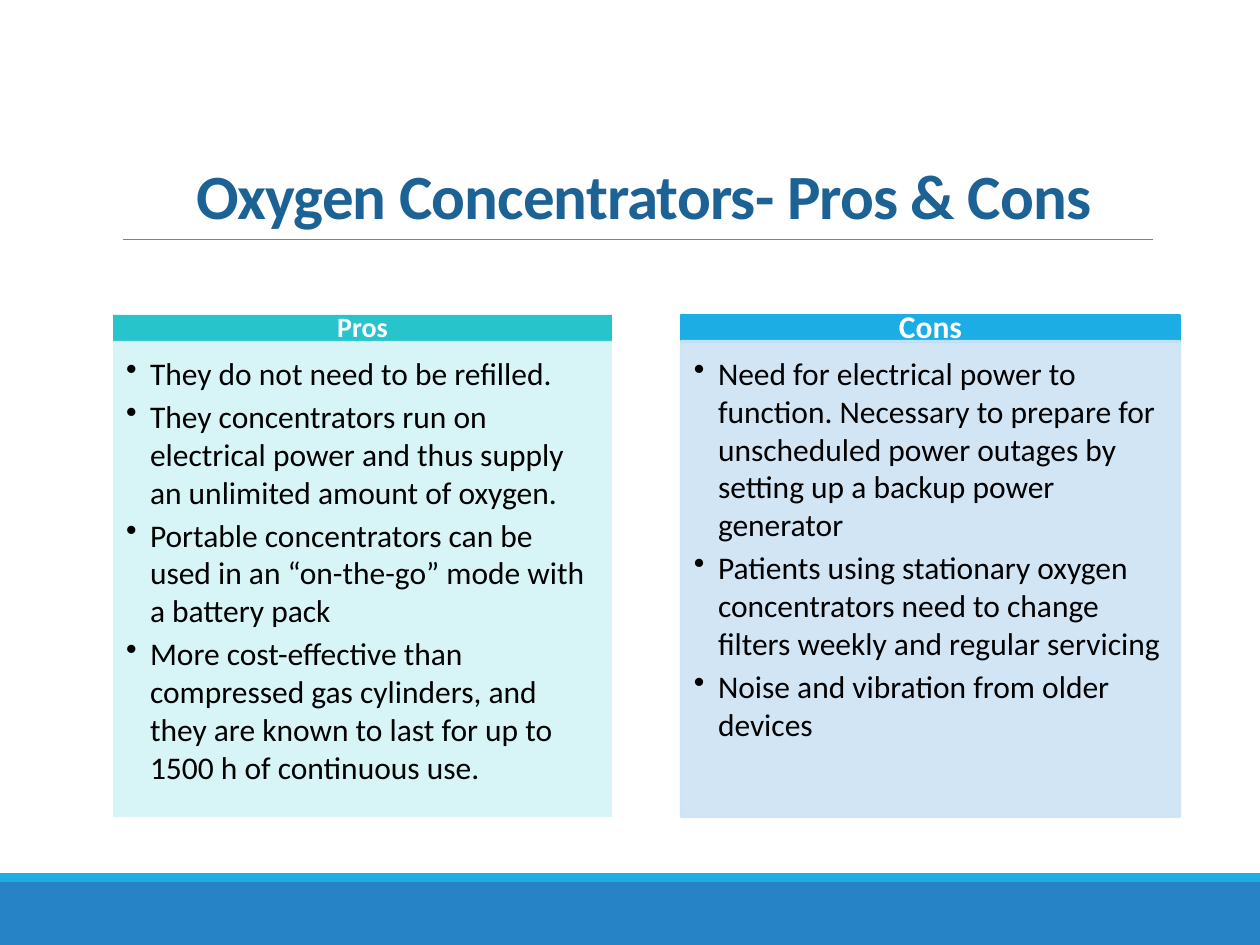
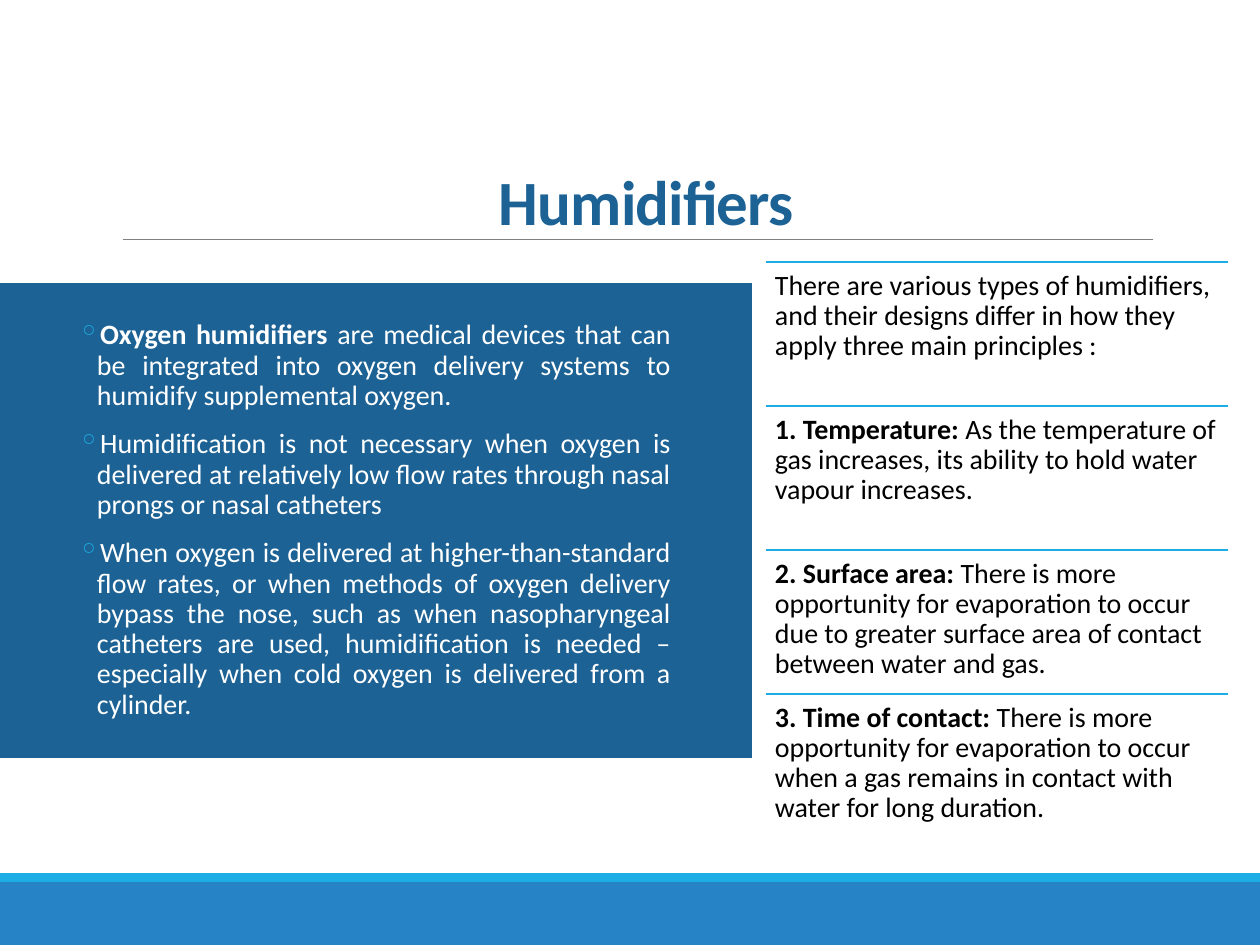
"""Build two slides on oxygen concentrators and humidifiers."""
from lxml import etree
from pptx import Presentation
from pptx.dml.color import RGBColor
from pptx.enum.shapes import MSO_CONNECTOR, MSO_SHAPE
from pptx.enum.text import MSO_ANCHOR, PP_ALIGN
from pptx.oxml.ns import qn
from pptx.util import Emu, Pt

RECTANGLE = MSO_SHAPE.RECTANGLE
STRAIGHT = MSO_CONNECTOR.STRAIGHT
TOP, MIDDLE, BOTTOM = MSO_ANCHOR.TOP, MSO_ANCHOR.MIDDLE, MSO_ANCHOR.BOTTOM
LEFT, CENTER, JUSTIFY = PP_ALIGN.LEFT, PP_ALIGN.CENTER, PP_ALIGN.JUSTIFY

FONT = "Calibri"
PX_PER_INCH = 126
SLIDE_WIDTH, SLIDE_HEIGHT = 1260, 945
COLORS = {
    "navy": "1D6294", "blue": "2683C6", "sky": "1CADE4", "teal": "28C4CC",
    "pale_teal": "D3F5F6", "pale_blue": "CDE3F5", "gray": "808080",
    "white": "FFFFFF", "black": "000000",
}

CONCENTRATORS = {
    "title": "Oxygen Concentrators- Pros & Cons",
    "title_box": (112, 81, 1032, 151),
    "panels": [
        {"heading": "Pros", "size": 16, "fill": "teal", "body_fill": "pale_teal",
         "outlined": False, "points": [
             "They do not need to be refilled.",
             "They concentrators run on electrical power and thus supply an "
             "unlimited amount of oxygen.",
             "Portable concentrators can be used in an “on-the-go” mode with "
             "a battery pack",
             "More cost-effective than compressed gas cylinders, and they are "
             "known to last for up to 1500 h of continuous use."]},
        {"heading": "Cons", "size": 18, "fill": "sky", "body_fill": "pale_blue",
         "outlined": True, "points": [
             "Need for electrical power to function. Necessary to prepare for "
             "unscheduled power outages by setting up a backup power generator",
             "Patients using stationary oxygen concentrators need to change "
             "filters weekly and regular servicing",
             "Noise and vibration from older devices"]},
    ],
}

HUMIDIFIERS = {
    "title": "Humidifiers",
    "title_box": (116, 84, 1029, 154),
    "facts": [
        ("Oxygen humidifiers ",
         "are medical devices that can be integrated into oxygen delivery "
         "systems to humidify supplemental oxygen. "),
        ("", "Humidification is not necessary when oxygen is delivered at "
         "relatively low flow rates through nasal prongs or nasal catheters"),
        ("", "When oxygen is delivered at higher-than-standard flow rates, or "
         "when methods of oxygen delivery bypass the nose, such as when "
         "nasopharyngeal catheters are used, humidification is needed – "
         "especially when cold oxygen is delivered from a cylinder."),
    ],
    "principles": [
        ("", "There are various types of humidifiers, and their designs differ "
         "in how they apply three main principles :"),
        ("1. Temperature: ", "As the temperature of gas increases, its ability "
         "to hold water vapour increases."),
        ("2. Surface area: ", "There is more opportunity for evaporation to "
         "occur due to greater surface area of contact between water and gas."),
        ("3. Time of contact: ", "There is more opportunity for evaporation to "
         "occur when a gas remains in contact with water for long duration."),
    ],
}


def px(length):
    """Turn px into EMU."""
    return Emu(round(length * 914400 / PX_PER_INCH))


def rgb(name):
    """Look up a palette colour."""
    return RGBColor.from_string(COLORS[name])


def set_alpha(color_format_parent, percent):
    """Make every colour below an element partly transparent."""
    for color in color_format_parent.iter(qn("a:srgbClr")):
        etree.SubElement(color, qn("a:alpha"), val=str(percent * 1000))


def add_rectangle(slide, box, fill, line=None, alpha=None):
    """Add a flat rectangle with an optional outline and opacity."""
    shape = slide.shapes.add_shape(RECTANGLE, *map(px, box))
    shape.shadow.inherit = False
    shape.fill.solid()
    shape.fill.fore_color.rgb = rgb(fill)
    if line:
        shape.line.color.rgb = rgb(line)
        shape.line.width = Pt(1.25)
    else:
        shape.line.fill.background()
    if alpha:
        set_alpha(shape._element.spPr, alpha)
    return shape


def add_rule(slide, left, top, width, color, weight):
    """Add a horizontal line."""
    line = slide.shapes.add_connector(
        STRAIGHT, px(left), px(top), px(left + width), px(top))
    line.line.color.rgb = rgb(color)
    line.line.width = Pt(weight)
    etree.SubElement(line._element.spPr, qn("a:effectLst"))


def set_bullet(paragraph, character, margin, hang, color):
    """Give a paragraph a bullet with a hanging indent."""
    properties = paragraph._p.get_or_add_pPr()
    properties.set("marL", str(px(margin)))
    properties.set("indent", str(-px(hang)))
    if color:
        bullet_color = etree.SubElement(properties, qn("a:buClr"))
        etree.SubElement(bullet_color, qn("a:srgbClr"), val=COLORS[color])
    etree.SubElement(properties, qn("a:buChar"), char=character)


def write(shape, paragraphs, size, color="black", align=LEFT, anchor=TOP,
          insets=(0, 0, 0, 0), spacing=1.0, before=0, after=0, bullet=None,
          tracking=None):
    """Write paragraphs of (bold lead, plain text) pairs into a shape."""
    frame = shape.text_frame
    frame.word_wrap = True
    frame.vertical_anchor = anchor
    (frame.margin_left, frame.margin_top,
     frame.margin_right, frame.margin_bottom) = map(px, insets)
    for index, parts in enumerate(paragraphs):
        paragraph = frame.add_paragraph() if index else frame.paragraphs[0]
        paragraph.alignment = align
        paragraph.line_spacing = spacing
        paragraph.space_before, paragraph.space_after = Pt(before), Pt(after)
        if bullet:
            set_bullet(paragraph, *bullet)
        for text, bold in zip(parts, (True, False)):
            if not text:
                continue
            run = paragraph.add_run()
            run.text = text
            run.font.name, run.font.size, run.font.bold = FONT, Pt(size), bold
            run.font.color.rgb = rgb(color)
            if tracking:
                run._r.get_or_add_rPr().set("spc", str(tracking))


def add_text(slide, box, paragraphs, size, **style):
    """Add a text box."""
    write(slide.shapes.add_textbox(*map(px, box)), paragraphs, size, **style)


def add_base_slide(presentation, content):
    """Add a slide with the footer bands, title and title rule."""
    slide = presentation.slides.add_slide(presentation.slide_layouts[6])
    add_rectangle(slide, (0, 882, SLIDE_WIDTH, 63), "blue")
    add_rectangle(slide, (0, 873, SLIDE_WIDTH, 9), "sky")
    add_rule(slide, 123, 239, 1030, "gray", 0.5)
    add_text(slide, content["title_box"], [(content["title"], "")], 36,
             color="navy", align=CENTER, anchor=BOTTOM, spacing=Pt(30),
             after=13.5, bullet=(" ", 9, 9, "sky"), tracking=-50)
    return slide


def build_concentrators(presentation):
    """Add the slide that sets pros beside cons."""
    slide = add_base_slide(presentation, CONCENTRATORS)
    left, top, width, pitch = 113, 315, 499, 568
    heading_height, body_top, body_height = 27, 341, 476
    for index, panel in enumerate(CONCENTRATORS["panels"]):
        x = left + index * pitch
        outlined = panel["outlined"]
        heading = add_rectangle(slide, (x, top, width, heading_height),
                                panel["fill"], panel["fill"] if outlined else None)
        write(heading, [(panel["heading"], "")], panel["size"], color="white",
              align=CENTER, anchor=MIDDLE, insets=(15, 9, 15, 9), spacing=0.9)
        body = add_rectangle(slide, (x, body_top, width, body_height),
                             panel["body_fill"],
                             panel["body_fill"] if outlined else None, alpha=90)
        write(body, [("", point) for point in panel["points"]], 18,
              insets=(13, 13, 18, 20), after=3, bullet=("•", 24, 24, None))


def build_humidifiers(presentation):
    """Add the slide with humidifier facts and ruled principles."""
    slide = add_base_slide(presentation, HUMIDIFIERS)
    add_rectangle(slide, (0, 283, 752, 475), "navy")
    add_text(slide, (58, 305, 613, 431), HUMIDIFIERS["facts"], 16,
             color="white", align=JUSTIFY, anchor=MIDDLE, spacing=0.9,
             before=1.5, after=9, bullet=("◦", 39, 19, "sky"))
    left, top, width, pitch = 766, 262, 462, 144
    for index, principle in enumerate(HUMIDIFIERS["principles"]):
        y = top + index * pitch
        add_rule(slide, left, y, width, "sky", 1.25)
        add_text(slide, (left, y, width, pitch), [principle], 16,
                 insets=(9, 9, 9, 9), spacing=0.9)


def main():
    """Build and save the presentation."""
    presentation = Presentation()
    presentation.slide_width = px(SLIDE_WIDTH)
    presentation.slide_height = px(SLIDE_HEIGHT)
    build_concentrators(presentation)
    build_humidifiers(presentation)
    presentation.save("out.pptx")


if __name__ == "__main__":
    main()
